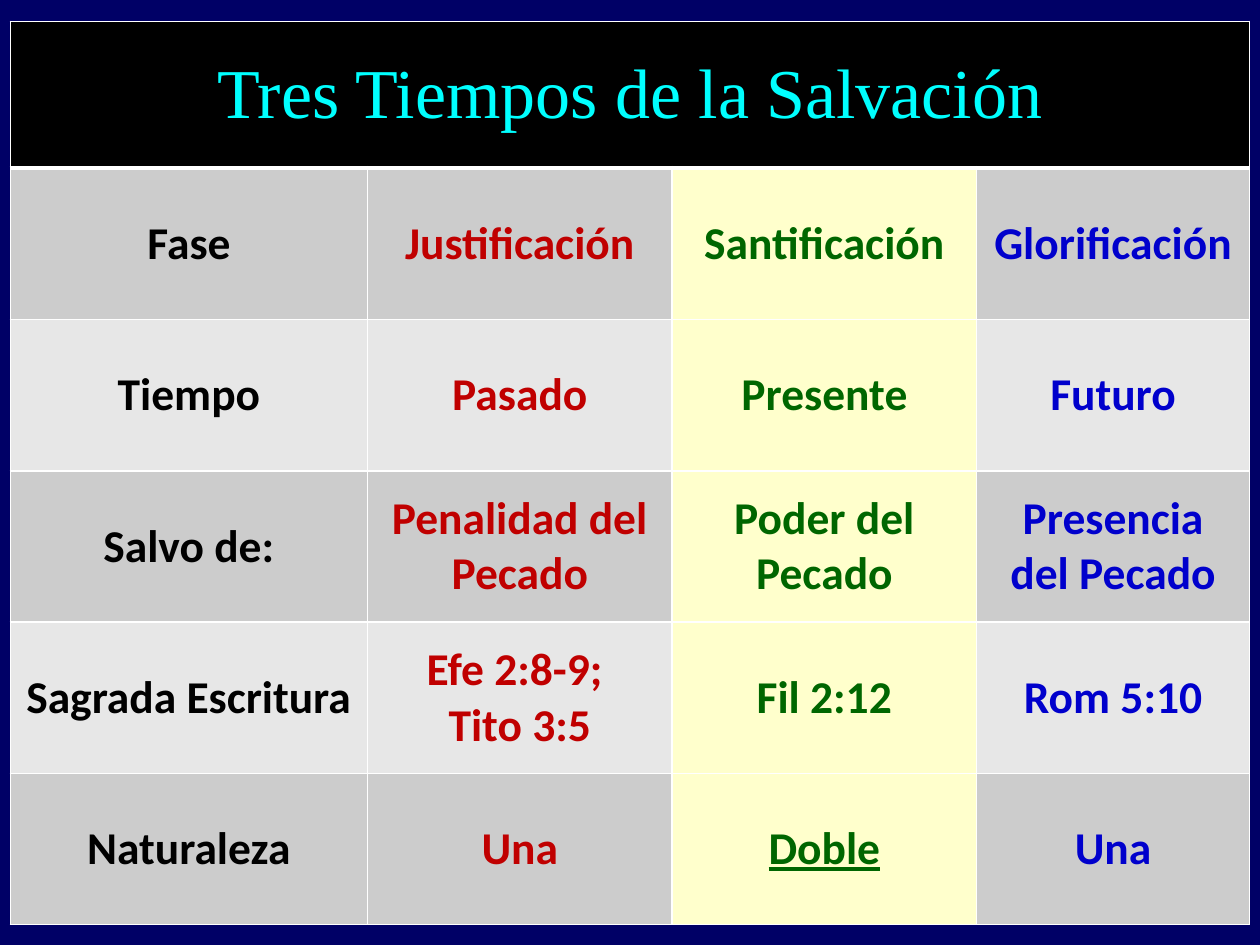
from pptx import Presentation, util as u
from pptx.dml.color import RGBColor
from pptx.enum import text
from pptx.oxml import parse_xml
from pptx.oxml.ns import nsdecls

TITLE = "Tres Tiempos de la Salvación"
ROWS = [
    ("Fase", "Justificación", "Santificación", "Glorificación"),
    ("Tiempo", "Pasado", "Presente", "Futuro"),
    ("Salvo de:", "Penalidad del Pecado", "Poder del Pecado", "Presencia del Pecado"),
    ("Sagrada Escritura", "Efe 2:8-9; \nTito 3:5", "Fil 2:12", "Rom 5:10"),
    ("Naturaleza", "Una", "Doble", "Una"),
]
UNDERLINED = "Doble"
HIGHLIGHTED_COLUMN = 2

THEME = {
    "background": "000066",
    "title_fill": "000000",
    "title_color": "00FFFF",
    "title_font": "Times New Roman",
    "title_size": 40,
    "column_colors": ("000000", "C00000", "006600", "0000CC"),
    "band_fills": ("CCCCCC", "E7E7E7"),
    "highlight_fill": "FFFFCC",
    "body_font": "Calibri",
    "body_size": 26,
    "border": "FFFFFF",
}

LEFT, TOP = 0.21, 0.43
COLUMN_WIDTHS = (7.2, 6.14, 6.14, 5.5)
TITLE_HEIGHT, ROW_HEIGHT = 2.96, 3.05


def add_borders(cell, bottom=1, top=1):
    """Draw all four edges; widths are in points."""
    properties = cell._tc.get_or_add_tcPr()
    for index, (side, width) in enumerate(
        (("L", 1), ("R", 1), ("T", top), ("B", bottom))
    ):
        line = parse_xml(
            f'<a:ln{side} {nsdecls("a")} w="{u.Pt(width)}"><a:solidFill>'
            f'<a:srgbClr val="{THEME["border"]}"/></a:solidFill></a:ln{side}>'
        )
        properties.insert(index, line)


def write_cell(cell, words, fill, color, font, size, bold):
    cell.fill.solid()
    cell.fill.fore_color.rgb = RGBColor.from_string(fill)
    cell.vertical_anchor = text.MSO_ANCHOR.MIDDLE
    cell.text_frame.text = words
    for para in cell.text_frame.paragraphs:
        para.alignment = text.PP_ALIGN.CENTER
        for span in para.runs:
            span.font.name = font
            span.font.size = u.Pt(size)
            span.font.bold = bold
            span.font.underline = words == UNDERLINED
            span.font.color.rgb = RGBColor.from_string(color)


def fill_title(table):
    title = table.cell(0, 0)
    title.merge(table.cell(0, len(COLUMN_WIDTHS) - 1))
    write_cell(title, TITLE, THEME["title_fill"], THEME["title_color"],
               THEME["title_font"], THEME["title_size"], False)
    for cell in table.rows[0].cells:
        add_borders(cell, bottom=3)


def fill_body(table):
    for r, row in enumerate(ROWS):
        for c, words in enumerate(row):
            cell = table.cell(r + 1, c)
            band = THEME["band_fills"][r % 2]
            fill = THEME["highlight_fill"] if c == HIGHLIGHTED_COLUMN else band
            write_cell(cell, words, fill, THEME["column_colors"][c],
                       THEME["body_font"], THEME["body_size"], True)
            add_borders(cell, top=3 if r == 0 else 1)


def main():
    deck = Presentation()
    deck.slide_width, deck.slide_height = u.Cm(25.4), u.Cm(19.05)
    page = deck.slides.add_slide(deck.slide_layouts[6])
    page.background.fill.solid()
    page.background.fill.fore_color.rgb = RGBColor.from_string(THEME["background"])

    heights = [TITLE_HEIGHT] + [ROW_HEIGHT] * len(ROWS)
    table = page.shapes.add_table(
        len(heights), len(COLUMN_WIDTHS), u.Cm(LEFT), u.Cm(TOP),
        u.Cm(sum(COLUMN_WIDTHS)), u.Cm(sum(heights)),
    ).table
    for column, width in zip(table.columns, COLUMN_WIDTHS):
        column.width = u.Cm(width)
    for row, height in zip(table.rows, heights):
        row.height = u.Cm(height)
    fill_title(table)
    fill_body(table)
    deck.save("out.pptx")


if __name__ == "__main__":
    main()
